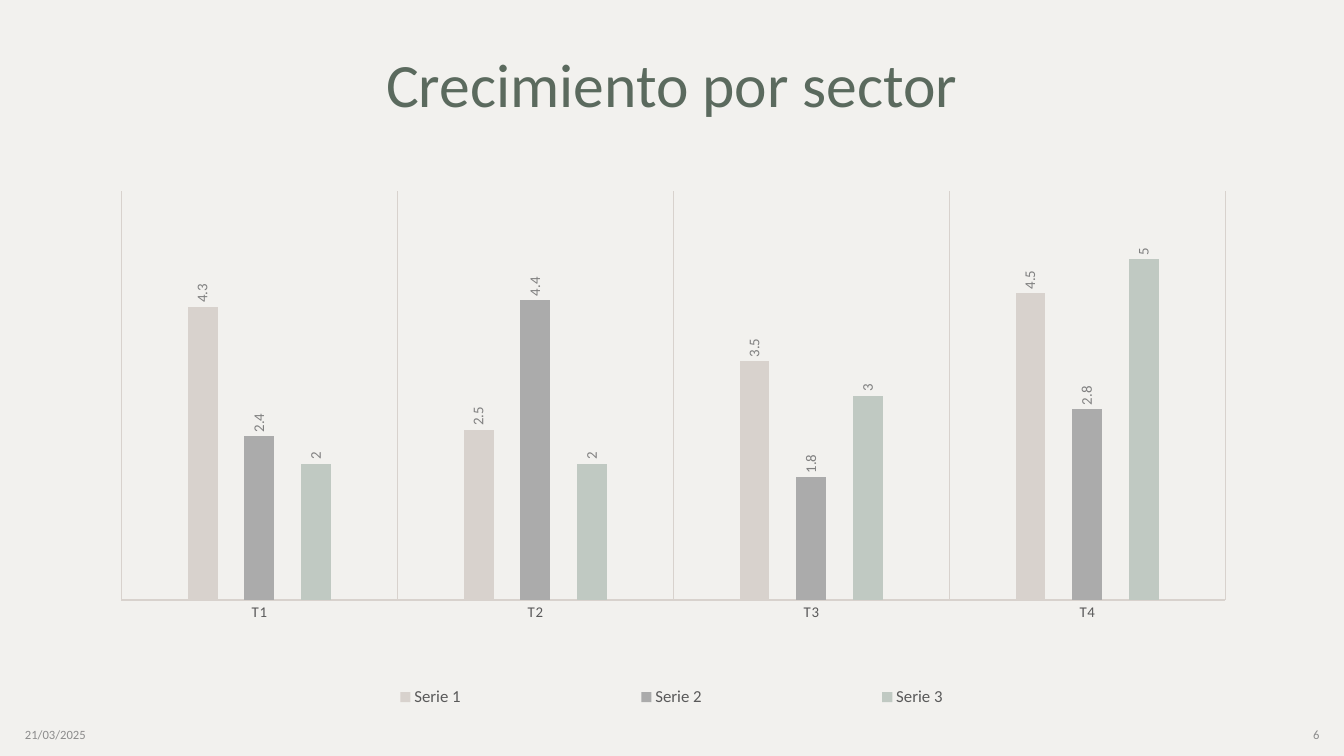
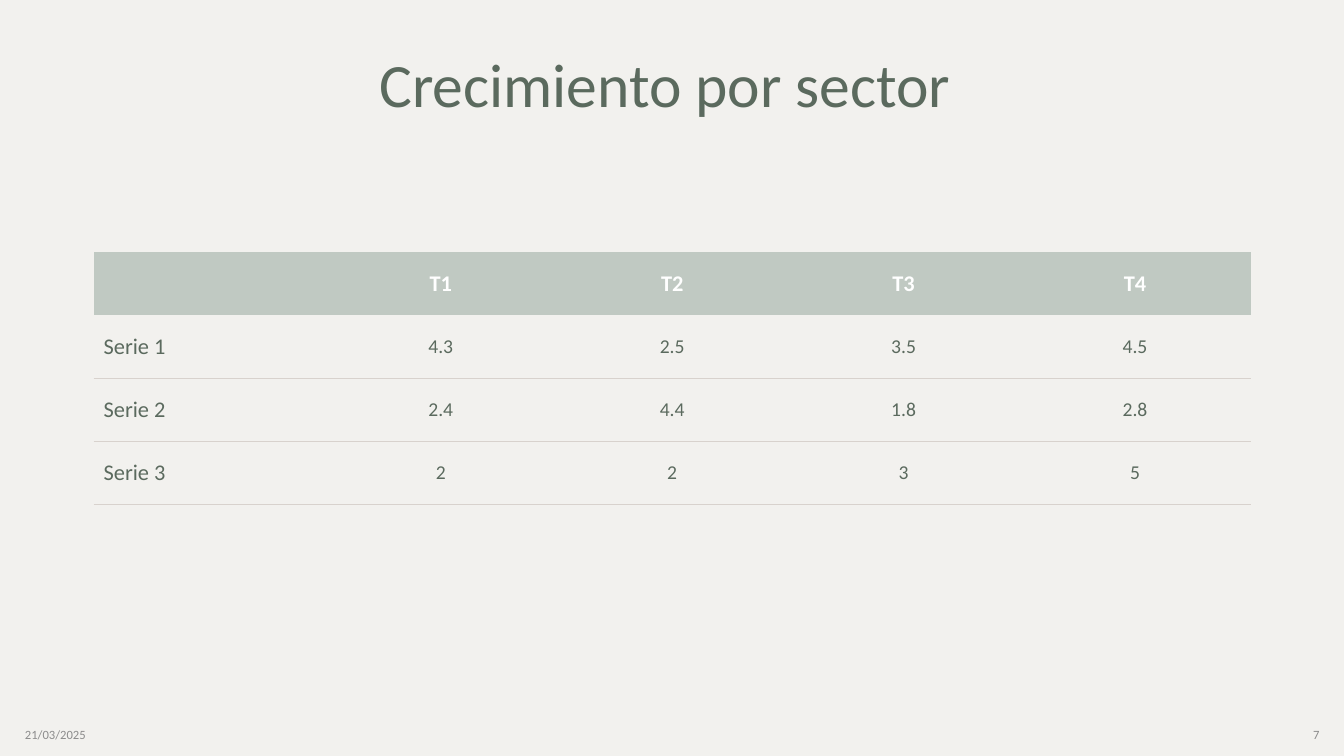
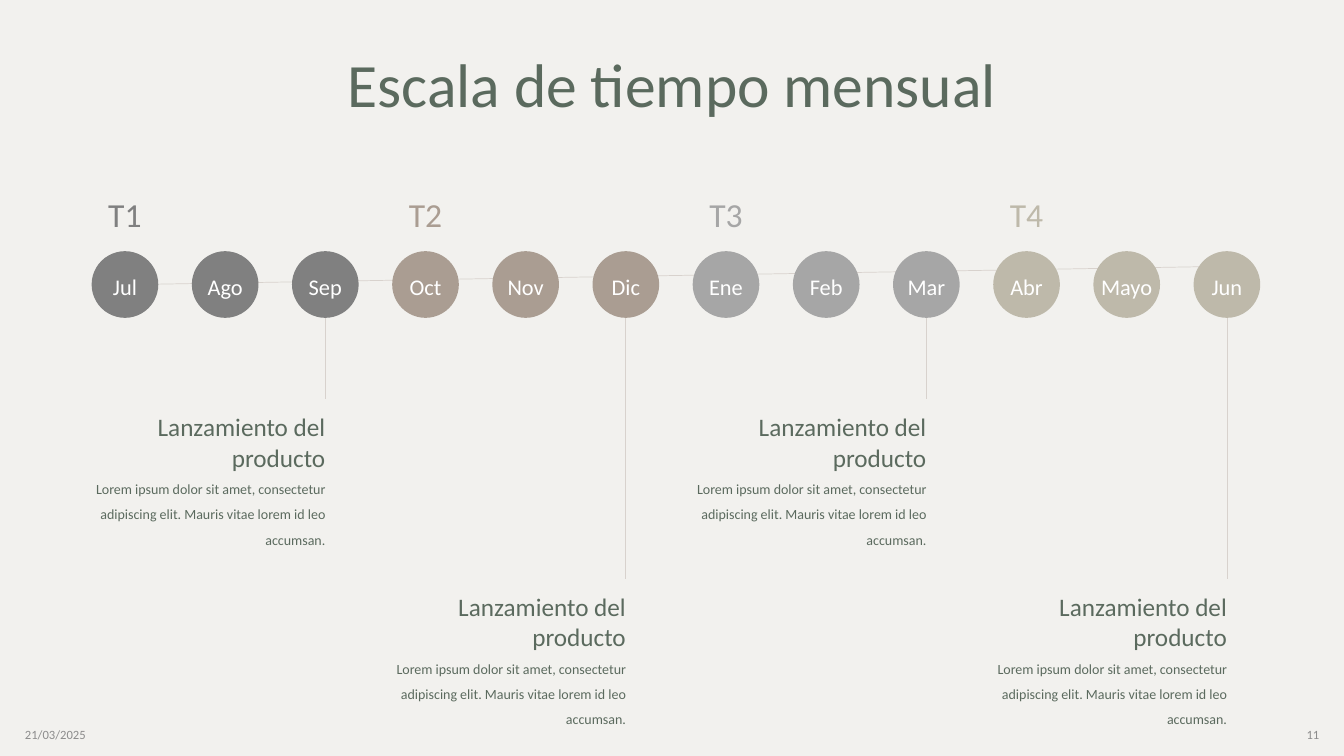
from lxml.etree import SubElement
from pptx import Presentation
from pptx.chart.data import CategoryChartData
from pptx.dml.color import RGBColor
from pptx.enum.chart import XL_CHART_TYPE, XL_LABEL_POSITION, XL_LEGEND_POSITION, XL_TICK_MARK
from pptx.enum.shapes import MSO_CONNECTOR, MSO_SHAPE
from pptx.enum.text import MSO_ANCHOR, PP_ALIGN
from pptx.oxml import parse_xml
from pptx.oxml.ns import nsdecls, qn
from pptx.util import Cm, Pt

FONT = "Calibri"
PAPER = RGBColor(0xF2, 0xF1, 0xEE)
GREEN = RGBColor(0x5B, 0x6A, 0x5E)
SAGE = RGBColor(0xC0, 0xC9, 0xC2)
SAND = RGBColor(0xD8, 0xD2, 0xCD)
SILVER = RGBColor(0xAB, 0xAB, 0xAB)
FOOTER_GRAY = RGBColor(0x8C, 0x8C, 0x8C)
AXIS_GRAY = RGBColor(0x59, 0x59, 0x59)
GRAY = RGBColor(0x80, 0x80, 0x80)
TAUPE = RGBColor(0xAA, 0x9D, 0x92)
LIGHT_GRAY = RGBColor(0xA6, 0xA6, 0xA6)
KHAKI = RGBColor(0xBE, 0xB9, 0xAA)
WHITE = RGBColor(0xFF, 0xFF, 0xFF)

LEFT, WIDTH = 2.36, 29.16  # content column, cm

QUARTERS = ["T1", "T2", "T3", "T4"]
SERIES = [
    ("Serie 1", [4.3, 2.5, 3.5, 4.5], SAND),
    ("Serie 2", [2.4, 4.4, 1.8, 2.8], SILVER),
    ("Serie 3", [2, 2, 3, 5], SAGE),
]

prs = Presentation()
prs.slide_width, prs.slide_height = Cm(33.87), Cm(19.05)
fill = prs.slide_master.background.fill
fill.solid()
fill.fore_color.rgb = PAPER


def write(tf, paragraphs, color, align=PP_ALIGN.LEFT, anchor=MSO_ANCHOR.MIDDLE):
    """Fill a text frame with (text, size, line spacing) paragraphs."""
    tf.word_wrap = True
    tf.vertical_anchor = anchor
    for i, (text, size, spacing) in enumerate(paragraphs):
        p = tf.paragraphs[0] if i == 0 else tf.add_paragraph()
        p.text = text
        p.alignment = align
        p.line_spacing = spacing
        p.font.name = FONT
        p.font.size = Pt(size)
        p.font.color.rgb = color


def new_slide(title, number):
    """Add a slide with its title, date and number."""
    s = prs.slides.add_slide(prs.slide_layouts[5])
    sp = s.shapes.title
    sp.left, sp.top, sp.width, sp.height = Cm(LEFT), Cm(0.34), Cm(WIDTH), Cm(3.75)
    write(sp.text_frame, [(title, 44, 0.9)], GREEN, PP_ALIGN.CENTER)
    for x, text, align in [(0.38, "21/03/2025", PP_ALIGN.LEFT), (25.88, number, PP_ALIGN.RIGHT)]:
        sp = s.shapes.add_textbox(Cm(x), Cm(18.01), Cm(7.62), Cm(1.02))
        write(sp.text_frame, [(text, 9, 1.0)], FOOTER_GRAY, align)
    return s


# Slide 1: column chart
s = new_slide("Crecimiento por sector", "6")
data = CategoryChartData()
data.categories = QUARTERS
for name, values, _ in SERIES:
    data.add_series(name, values)
chart = s.shapes.add_chart(XL_CHART_TYPE.COLUMN_CLUSTERED, Cm(LEFT), Cm(4.53),
                           Cm(WIDTH), Cm(13.51), data).chart
chart.has_title = False
chart.font.name = FONT
chart.font.size = Pt(10)

# Axes
axis = chart.category_axis
axis.major_tick_mark = XL_TICK_MARK.NONE
axis.has_major_gridlines = True
for line in (axis.format.line, axis.major_gridlines.format.line):
    line.color.rgb = SAND
    line.width = Pt(0.75)
font = axis.tick_labels.font
font.name, font.size = FONT, Pt(10.6)
font.color.rgb = AXIS_GRAY
for props in chart.element.xpath(".//c:catAx/c:txPr//a:defRPr"):
    props.set("spc", "60")
axis = chart.value_axis
axis.visible = False
axis.has_major_gridlines = False
axis.minimum_scale, axis.maximum_scale = 0, 6

# Columns and their upright labels
plot = chart.plots[0]
plot.gap_width, plot.overlap, plot.vary_by_categories = 444, -90, False
for series, (_, _, color) in zip(plot.series, SERIES):
    series.format.fill.solid()
    series.format.fill.fore_color.rgb = color
    labels = series.data_labels
    labels.show_value = True
    labels.position = XL_LABEL_POSITION.OUTSIDE_END
    labels.font.name, labels.font.size = FONT, Pt(10.6)
    labels.font.color.rgb = GRAY
for body in chart.element.xpath(".//c:ser/c:dLbls/c:txPr/a:bodyPr"):
    body.set("rot", "-5400000")
    body.set("vert", "horz")

# Legend, then fixed places for plot and legend
chart.has_legend = True
legend = chart.legend
legend.position = XL_LEGEND_POSITION.TOP
legend.include_in_layout = False
legend.font.name, legend.font.size = FONT, Pt(12)
legend.font.color.rgb = AXIS_GRAY
for tag, index, target, box in [
    ("c:plotArea", 0, '<c:layoutTarget val="inner"/>', (0.024, 0.021, 0.954, 0.763)),
    ("c:legend", 1, "", (0.114, 0.935, 0.771, 0.06)),
]:
    parent = chart.element.xpath(".//" + tag)[0]
    for old in parent.findall(qn("c:layout")):
        parent.remove(old)
    modes = '<c:xMode val="edge"/><c:yMode val="edge"/>'
    sizes = "".join(f'<c:{k} val="{v}"/>' for k, v in zip("xywh", box))
    parent.insert(index, parse_xml(
        f'<c:layout {nsdecls("c")}><c:manualLayout>{target}{modes}{sizes}'
        "</c:manualLayout></c:layout>"))

# Slide 2: table
s = new_slide("Crecimiento por sector ", "7")
rows = [[""] + QUARTERS] + [[name] + values for name, values, _ in SERIES]
table = s.shapes.add_table(len(rows), len(rows[0]), Cm(LEFT), Cm(6.35), Cm(WIDTH), Cm(6.36)).table
table.horz_banding = False
style = table._tbl.tblPr.find(qn("a:tableStyleId"))
style.text = "{2D5ABB26-0587-4C30-8999-92F81FD0307C}"  # no style, no grid
for i, row in enumerate(rows):
    table.rows[i].height = Cm(1.59)
    for j, value in enumerate(row):
        cell = table.cell(i, j)
        cell.vertical_anchor = MSO_ANCHOR.MIDDLE
        p = cell.text_frame.paragraphs[0]
        p.text = str(value)
        p.alignment = PP_ALIGN.CENTER if j else PP_ALIGN.LEFT
        p.font.name = FONT
        p.font.size = Pt(14 if i and j else 16)
        p.font.bold = i == 0
        p.font.color.rgb = GREEN if i else WHITE
        if i == 0:
            cell.fill.solid()
            cell.fill.fore_color.rgb = SAGE
        else:
            cell.fill.background()
            cell._tc.get_or_add_tcPr().insert(0, parse_xml(
                f'<a:lnB {nsdecls("a")} w="6350"><a:solidFill><a:srgbClr val="{SAND}"/>'
                "</a:solidFill></a:lnB>"))

# Slide 3: monthly timeline
s = new_slide("Escala de tiempo mensual", "11")
MONTHS = ["Jul", "Ago", "Sep", "Oct", "Nov", "Dic", "Ene", "Feb", "Mar", "Abr", "Mayo", "Jun"]
COLORS = [GRAY, TAUPE, LIGHT_GRAY, KHAKI]
EVENT = [
    ("Lanzamiento del producto", 18, 1.0),
    ("Lorem ipsum dolor sit amet, consectetur adipiscing elit. "
     "Mauris vitae lorem id leo accumsan.", 10, 1.5),
]
DOT, FIRST, LAST, DOT_TOP = 1.68, 2.31, 30.08, 6.33
EVENT_WIDTH = 6.86
dots = [FIRST + i * (LAST - FIRST) / (len(MONTHS) - 1) for i in range(len(MONTHS))]
drops = [x + DOT / 2 for x in dots[2::3]]  # last month of each quarter
drop_ends = [10.05, 14.58] * 2

# Lines behind the months
lines = [(x, 7.21, x, end) for x, end in zip(drops, drop_ends)]
lines.append((3.99, 7.16, 30.92, 6.71))
for x1, y1, x2, y2 in lines:
    line = s.shapes.add_connector(MSO_CONNECTOR.STRAIGHT, Cm(x1), Cm(y1), Cm(x2), Cm(y2))
    line.line.color.rgb = SAND
    line.line.width = Pt(0.5)
    SubElement(line._element.spPr, qn("a:effectLst"))

# Months
for i, (month, x) in enumerate(zip(MONTHS, dots)):
    sp = s.shapes.add_shape(MSO_SHAPE.OVAL, Cm(x), Cm(DOT_TOP), Cm(DOT), Cm(DOT))
    sp.shadow.inherit = False
    sp.fill.solid()
    sp.fill.fore_color.rgb = COLORS[i // 3]
    sp.line.fill.background()
    tf = sp.text_frame
    write(tf, [(month, 16, 1.0)], WHITE, PP_ALIGN.CENTER)
    tf.word_wrap = False
    tf.margin_left = tf.margin_right = tf.margin_bottom = 0
    tf.margin_top = Cm(0.08)

# Quarter names and events
for quarter, color, x, drop, end in zip(QUARTERS, COLORS, dots[::3], drops, drop_ends):
    sp = s.shapes.add_textbox(Cm(x), Cm(4.75), Cm(DOT), Cm(1.4))
    write(sp.text_frame, [(quarter, 24, 0.9)], color, PP_ALIGN.CENTER)
    sp = s.shapes.add_textbox(Cm(drop - EVENT_WIDTH), Cm(end + 0.2), Cm(EVENT_WIDTH), Cm(3.66))
    sp.text_frame.margin_right = 0
    write(sp.text_frame, EVENT, GREEN, PP_ALIGN.RIGHT, MSO_ANCHOR.TOP)

prs.save("out.pptx")
